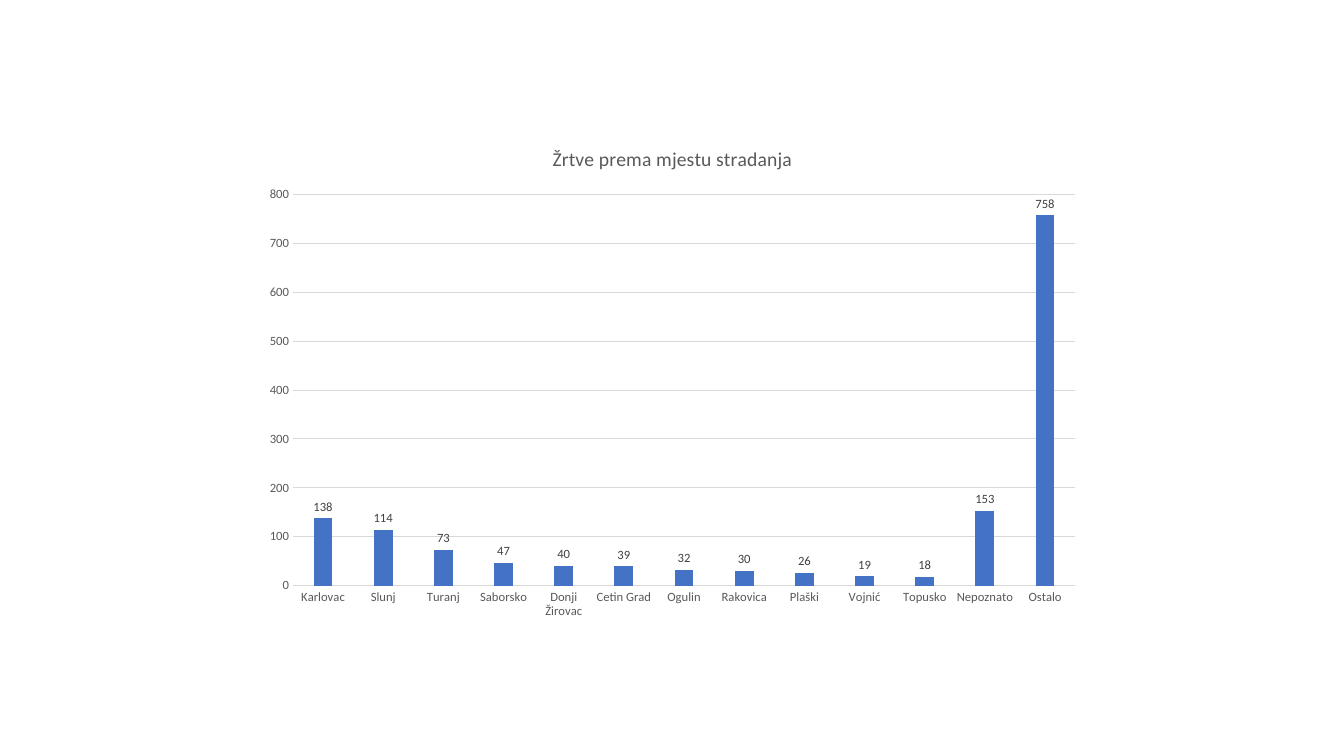
from dataclasses import dataclass

from pptx import Presentation
from pptx.chart.chart import Chart
from pptx.chart.data import CategoryChartData
from pptx.dml.color import RGBColor
from pptx.dml.line import LineFormat
from pptx.enum.chart import XL_CHART_TYPE, XL_LABEL_POSITION, XL_TICK_MARK
from pptx.slide import Slide
from pptx.text.text import Font
from pptx.util import Inches, Pt

COLORS = {
    "bar": "4472C4",
    "grid": "D9D9D9",
    "text": "595959",
    "label": "404040",
}
FONT_NAME = "Calibri"
TITLE = "Žrtve prema mjestu stradanja"


@dataclass(frozen=True)
class Place:
    name: str
    victims: int


PLACES = [
    Place("Karlovac", 138),
    Place("Slunj", 114),
    Place("Turanj", 73),
    Place("Saborsko", 47),
    Place("Donji Žirovac", 40),
    Place("Cetin Grad", 39),
    Place("Ogulin", 32),
    Place("Rakovica", 30),
    Place("Plaški", 26),
    Place("Vojnić", 19),
    Place("Topusko", 18),
    Place("Nepoznato", 153),
    Place("Ostalo", 758),
]


def color(name: str) -> RGBColor:
    return RGBColor.from_string(COLORS[name])


def style_font(font: Font, size: float, color_name: str) -> None:
    font.name = FONT_NAME
    font.size = Pt(size)
    font.bold = False
    font.color.rgb = color(color_name)


def style_line(line: LineFormat) -> None:
    line.color.rgb = color("grid")
    line.width = Pt(0.75)


def add_victims_chart(slide: Slide, places: list[Place]) -> Chart:
    chart_data = CategoryChartData()
    chart_data.categories = [place.name for place in places]
    chart_data.add_series("Žrtve", [place.victims for place in places])
    chart = slide.shapes.add_chart(
        XL_CHART_TYPE.COLUMN_CLUSTERED,
        Inches(2.51), Inches(1.25), Inches(8.32), Inches(4.99),
        chart_data,
    ).chart
    chart.has_legend = False
    style_font(chart.font, 10, "text")
    return chart


def style_title(chart: Chart) -> None:
    chart.has_title = True
    chart.chart_title.include_in_layout = False
    paragraph = chart.chart_title.text_frame.paragraphs[0]
    run = paragraph.add_run()
    run.text = TITLE
    style_font(run.font, 14, "text")


def style_axes(chart: Chart) -> None:
    for axis in (chart.category_axis, chart.value_axis):
        axis.major_tick_mark = XL_TICK_MARK.NONE
        axis.minor_tick_mark = XL_TICK_MARK.NONE
        style_font(axis.tick_labels.font, 9, "text")
    style_line(chart.category_axis.format.line)
    value_axis = chart.value_axis
    value_axis.minimum_scale = 0
    value_axis.maximum_scale = 800
    value_axis.major_unit = 100
    value_axis.format.line.fill.background()
    value_axis.has_major_gridlines = True
    style_line(value_axis.major_gridlines.format.line)


def style_bars(chart: Chart) -> None:
    plot = chart.plots[0]
    plot.vary_by_categories = False
    plot.gap_width = 219
    plot.overlap = -27
    series = plot.series[0]
    series.format.fill.solid()
    series.format.fill.fore_color.rgb = color("bar")
    labels = series.data_labels
    labels.show_value = True
    labels.position = XL_LABEL_POSITION.OUTSIDE_END
    style_font(labels.font, 9, "label")


def main() -> None:
    presentation = Presentation()
    presentation.slide_width = Inches(13.33)
    presentation.slide_height = Inches(7.5)
    slide = presentation.slides.add_slide(presentation.slide_layouts[6])
    chart = add_victims_chart(slide, PLACES)
    style_title(chart)
    style_axes(chart)
    style_bars(chart)
    presentation.save("out.pptx")


if __name__ == "__main__":
    main()
